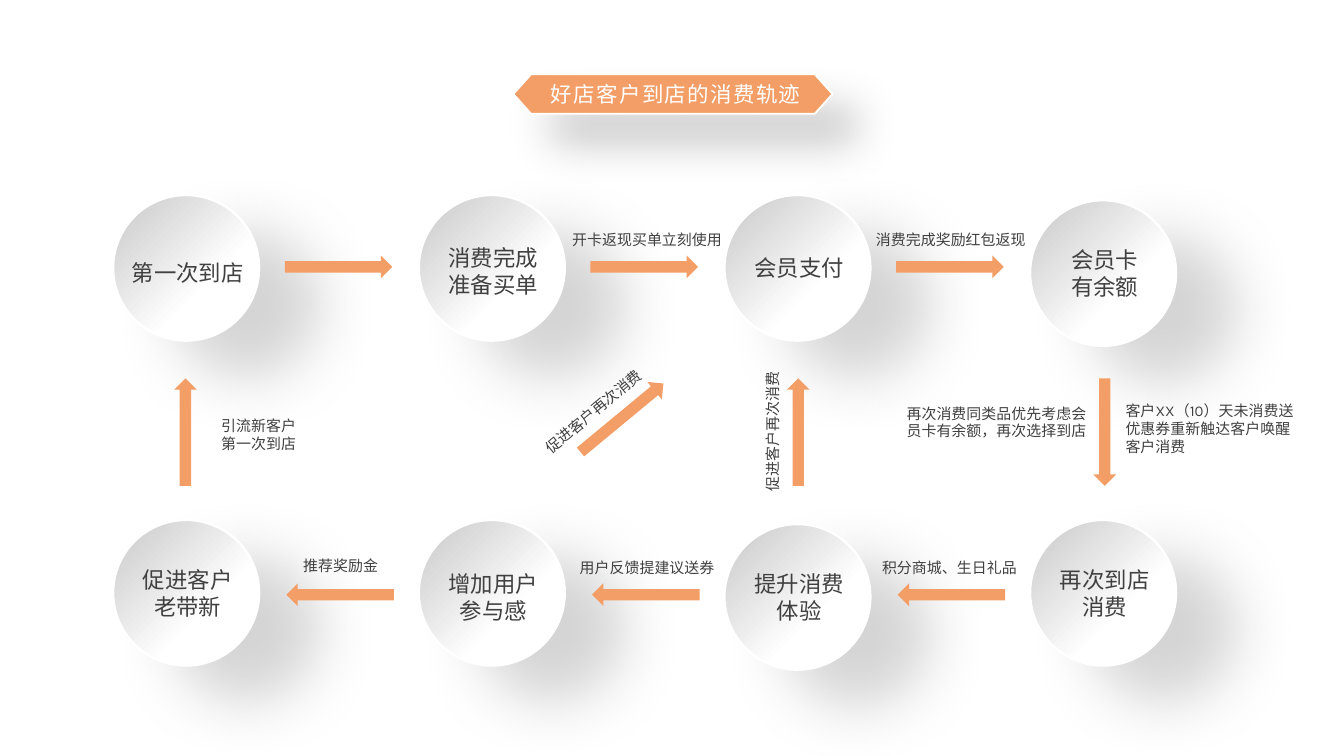
from copy import deepcopy

from lxml.etree import SubElement
from pptx import Presentation
from pptx.dml.color import RGBColor
from pptx.enum.shapes import MSO_SHAPE
from pptx.enum.text import MSO_ANCHOR, MSO_AUTO_SIZE, PP_ALIGN
from pptx.oxml.ns import qn
from pptx.util import Pt


def rgb(code):
    return RGBColor.from_string(code)


class JourneySlide:
    ORANGE, WHITE, GREY, INK = "F39E66", "FFFFFF", "808080", "404040"
    DISC_STOPS = [(0, "FFFFFF"), (0.36, "FFFFFF"), (1, "C7C7C7")]
    LATIN, CHINESE = "Karla", "Noto Sans CJK SC"
    DISC = (78.2, 78)
    LABEL = (77, 46)
    NOTE = (114.5, 46)
    ARROW = (57.6, 12.2)

    def __init__(self, deck):
        self.slide = deck.slides.add_slide(deck.slide_layouts[6])

    def outline(self, shape, width):
        shape.line.color.rgb = rgb(self.WHITE)
        shape.line.width = Pt(width)

    def drop_shadow(self, shape, opacity, blur, distance, angle):
        shape.shadow.inherit = False
        effects = shape._element.spPr.find(qn("a:effectLst"))
        outer = SubElement(effects, qn("a:outerShdw"), blurRad=str(Pt(blur)),
                           dist=str(Pt(distance)), dir=str(angle * 60000),
                           algn="tl", rotWithShape="0")
        tint = SubElement(outer, qn("a:srgbClr"), val=self.GREY)
        SubElement(tint, qn("a:alpha"), val=str(opacity * 1000))

    def style(self, paragraph, size, color, latin, spacing=0):
        font = paragraph.font
        font.size = Pt(size)
        font.name = latin
        font.color.rgb = rgb(color)
        SubElement(font._element, qn("a:ea"), typeface=self.CHINESE)
        if spacing:
            font._element.set("spc", str(round(spacing * 100)))

    def text(self, shapes, center_x, center_y, box, lines, size,
             align=PP_ALIGN.CENTER, rotation=0):
        width, height = box
        label = shapes.add_textbox(Pt(center_x - width / 2), Pt(center_y - height / 2),
                                   Pt(width), Pt(height))
        label.rotation = rotation
        frame = label.text_frame
        frame.word_wrap = True
        frame.vertical_anchor = MSO_ANCHOR.MIDDLE
        frame.margin_left = frame.margin_right = Pt(5.4)
        frame.margin_top = frame.margin_bottom = Pt(2.7)
        frame.text = lines
        for paragraph in frame.paragraphs:
            paragraph.alignment = align
            self.style(paragraph, size, self.INK, self.LATIN)

    def banner(self, title):
        left, right, top, bottom, point = 275, 446, 39.8, 61, 9.5
        middle = (top + bottom) / 2
        corners = [(right - point, top), (right, middle), (right - point, bottom),
                   (left + point, bottom), (left, middle)]
        builder = self.slide.shapes.build_freeform(Pt(left + point), Pt(top))
        builder.add_line_segments([(Pt(x), Pt(y)) for x, y in corners])
        ribbon = builder.convert_to_shape()
        ribbon.fill.solid()
        ribbon.fill.fore_color.rgb = rgb(self.ORANGE)
        self.outline(ribbon, 1)
        self.drop_shadow(ribbon, 38, 22, 23, 45)

        heading = self.slide.shapes.add_textbox(Pt(288), Pt(top), Pt(157.5), Pt(bottom - top))
        frame = heading.text_frame
        frame.word_wrap = True
        frame.auto_size = MSO_AUTO_SIZE.SHAPE_TO_FIT_TEXT
        frame.text = title
        self.style(frame.paragraphs[0], 11.5, self.WHITE, self.CHINESE, 0.7)

    def step(self, left, top, label_y, lines):
        shapes = self.slide.shapes.add_group_shape().shapes
        width, height = self.DISC
        disc = shapes.add_shape(MSO_SHAPE.OVAL, Pt(left), Pt(top), Pt(width), Pt(height))
        disc.fill.gradient()
        disc.fill.gradient_angle = 135
        stop_list = disc._element.spPr.find(".//" + qn("a:gsLst"))
        stop_list.append(deepcopy(stop_list[0]))
        for stop, (position, color) in zip(disc.fill.gradient_stops, self.DISC_STOPS):
            stop.position = position
            stop.color.rgb = rgb(color)
        self.outline(disc, 1.25)
        self.drop_shadow(disc, 32, 32, 37, 31)
        self.text(shapes, left + 40, label_y, self.LABEL, lines, 12)

    def arrow(self, center_x, center_y, rotation=0):
        width, height = self.ARROW
        arrow = self.slide.shapes.add_shape(
            MSO_SHAPE.RIGHT_ARROW, Pt(center_x - width / 2), Pt(center_y - height / 2),
            Pt(width), Pt(height))
        arrow.rotation = rotation
        arrow.shadow.inherit = False
        arrow.fill.solid()
        arrow.fill.fore_color.rgb = rgb(self.ORANGE)
        arrow.line.fill.background()

    def note(self, center_x, center_y, lines, align=PP_ALIGN.CENTER, rotation=0):
        self.text(self.slide.shapes, center_x, center_y, self.NOTE, lines, 8, align, rotation)


def main():
    deck = Presentation()
    deck.slide_width, deck.slide_height = Pt(720), Pt(405)
    journey = JourneySlide(deck)
    journey.banner("好店客户到店的消费轨迹")

    column_gap = 163.75
    step_rows = [
        [(104.5, 146.2, "第一次到店"), (104.5, 145.4, "消费完成\n准备买单"),
         (104.5, 143.3, "会员支付"), (107.3, 146.2, "会员卡\n有余额")],
        [(278.6, 317.5, "促进客户\n老带新"), (278.6, 319.7, "增加用户\n参与感"),
         (280.8, 319.7, "提升消费\n体验"), (278.6, 317.5, "再次到店\n消费")],
    ]
    for steps in step_rows:
        for column, (top, label_y, lines) in enumerate(steps):
            journey.step(60.6 + column * column_gap, top, label_y, lines)

    for column in range(3):
        journey.arrow(181.4 + column * column_gap, 143)
        journey.arrow(182.2 + column * column_gap, 318.6, 180)
    for center_x, rotation in [(99.4, 270), (427.7, 270), (591.8, 90)]:
        journey.arrow(center_x, 231.5, rotation)
    journey.arrow(333.2, 223.8, 320.4)

    journey.note(346.7, 128.2, "开卡返现买单立刻使用")
    journey.note(509.4, 128.2, "消费完成奖励红包返现")
    journey.note(533.9, 226.1, "再次消费同类品优先考虑会员卡有余额，再次选择到店")
    journey.note(654.8, 229.7, "客户XX（10）天未消费送\n优惠券重新触达客户唤醒\n客户消费", PP_ALIGN.LEFT)
    journey.note(508.7, 303.8, "积分商城、生日礼品")
    journey.note(346.7, 303.8, "用户反馈提建议送券")
    journey.note(182.5, 303.1, "推荐奖励金")
    journey.note(138.6, 232.6, "引流新客户\n第一次到店")
    for center_x, center_y, rotation in [(413.6, 231.1, 270), (317.9, 220.3, 320.3)]:
        journey.note(center_x, center_y, "促进客户再次消费", rotation=rotation)

    deck.save("out.pptx")


if __name__ == "__main__":
    main()
